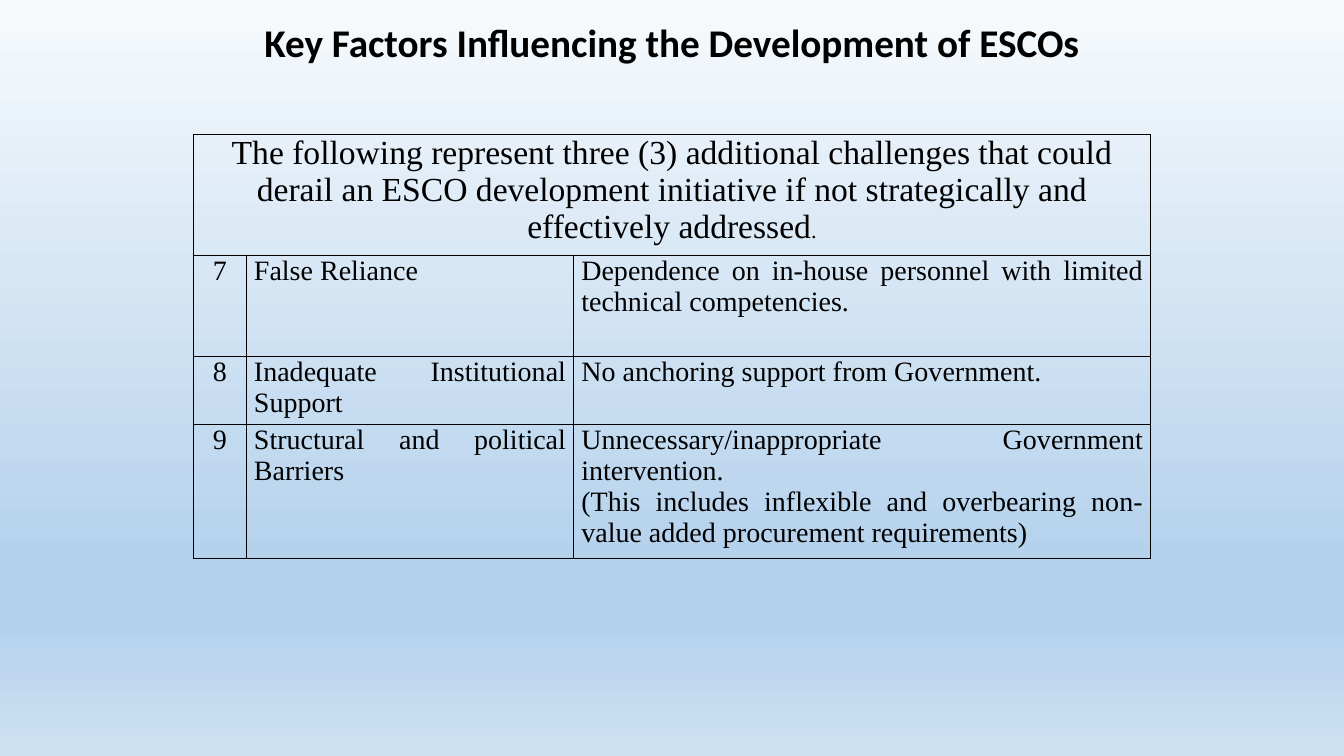
from lxml import etree
from pptx import Presentation
from pptx import util as u
from pptx.dml.color import RGBColor
from pptx.enum import text
from pptx.oxml import ns

BLACK = RGBColor(0x00, 0x00, 0x00)
ICE = RGBColor(0xF7, 0xFA, 0xFD)
SKY = RGBColor(0xB5, 0xD2, 0xEC)
PALE = RGBColor(0xCE, 0xE1, 0xF2)

TITLE = "Key Factors Influencing the Development of ESCOs"
HEADING = ("The following represent three (3) additional challenges that could derail an ESCO "
           "development initiative if not strategically and effectively addressed")
CHALLENGES = [
    ("7", "False Reliance",
     "Dependence on in-house personnel with limited technical competencies."),
    ("8", "Inadequate Institutional Support", "No anchoring support from Government."),
    ("9", "Structural and political Barriers",
     "Unnecessary/inappropriate Government intervention.\n"
     "(This includes inflexible and overbearing non-value added procurement requirements)"),
]
COLUMN_WIDTHS = [1.34, 8.25, 14.54]
ROW_HEIGHTS = [3.05, 2.55, 1.71, 3.38]


class SlideBuilder:
    title_font = "Calibri"
    table_font = "Times New Roman"
    text_color = BLACK
    border_points = 1
    cell_margin = u.Cm(0.19)

    def __init__(self, slide):
        self.slide = slide

    def format_run(self, run, font_name, size, bold=False):
        run.font.name = font_name
        run.font.size = u.Pt(size)
        run.font.bold = bold
        run.font.color.rgb = self.text_color

    def background(self, stops):
        """Fill the slide downwards with (percent, colour) stops."""
        fill = self.slide.background.fill
        fill.gradient()
        fill.gradient_angle = 270
        stop_list = next(self.slide.element.iter(ns.qn("a:gsLst")))
        for stop in list(stop_list):
            stop_list.remove(stop)
        for percent, color in stops:
            stop = etree.SubElement(stop_list, ns.qn("a:gs"), pos=str(percent * 1000))
            etree.SubElement(stop, ns.qn("a:srgbClr"), val=str(color))

    def title(self, wording, left, top, width, height):
        shape = self.slide.shapes.title
        shape.left, shape.top = u.Cm(left), u.Cm(top)
        shape.width, shape.height = u.Cm(width), u.Cm(height)
        frame = shape.text_frame
        frame.text = wording
        frame.word_wrap = True
        frame.auto_size = text.MSO_AUTO_SIZE.SHAPE_TO_FIT_TEXT
        paragraph = frame.paragraphs[0]
        paragraph.alignment = text.PP_ALIGN.CENTER
        self.format_run(paragraph.runs[0], self.title_font, 28, bold=True)

    def table(self, left, top, widths, heights):
        frame = self.slide.shapes.add_table(
            len(heights), len(widths), u.Cm(left), u.Cm(top),
            u.Cm(sum(widths)), u.Cm(sum(heights)))
        table = frame.table
        table.first_row = table.horz_banding = False
        for column, width in zip(table.columns, widths):
            column.width = u.Cm(width)
        for row, height in zip(table.rows, heights):
            row.height = u.Cm(height)
        for cell in table.iter_cells():
            cell.fill.background()
            cell.margin_left = cell.margin_right = self.cell_margin
            cell.margin_top = cell.margin_bottom = 0
        for properties in frame.element.iter(ns.qn("a:tcPr")):
            self.borders(properties)
        return table

    def borders(self, properties):
        for index, side in enumerate(("lnL", "lnR", "lnT", "lnB")):
            line = etree.Element(ns.qn("a:" + side), w=str(u.Pt(self.border_points)))
            fill = etree.SubElement(line, ns.qn("a:solidFill"))
            etree.SubElement(fill, ns.qn("a:srgbClr"), val=str(BLACK))
            properties.insert(index, line)

    def cell_text(self, cell, wording, alignment, size):
        cell.text_frame.text = wording
        for paragraph in cell.text_frame.paragraphs:
            paragraph.alignment = alignment
            for run in paragraph.runs:
                self.format_run(run, self.table_font, size)


def main():
    presentation = Presentation()
    presentation.slide_width, presentation.slide_height = u.Cm(33.87), u.Cm(19.05)
    title_only = presentation.slide_layouts[5]
    builder = SlideBuilder(presentation.slides.add_slide(title_only))

    builder.background([(0, ICE), (74, SKY), (83, SKY), (100, PALE)])
    builder.title(TITLE, 4.23, 0.33, 25.4, 1.45)

    table = builder.table(4.87, 3.38, COLUMN_WIDTHS, ROW_HEIGHTS)
    heading = table.cell(0, 0)
    heading.merge(table.cell(0, 2))
    builder.cell_text(heading, HEADING, text.PP_ALIGN.CENTER, 24)
    full_stop = heading.text_frame.paragraphs[0].add_run()
    full_stop.text = "."
    builder.format_run(full_stop, builder.table_font, 16)

    alignments = [text.PP_ALIGN.CENTER, text.PP_ALIGN.JUSTIFY, text.PP_ALIGN.JUSTIFY]
    for row, challenge in enumerate(CHALLENGES, start=1):
        for column, (wording, alignment) in enumerate(zip(challenge, alignments)):
            builder.cell_text(table.cell(row, column), wording, alignment, 20)

    presentation.save("out.pptx")


if __name__ == "__main__":
    main()
